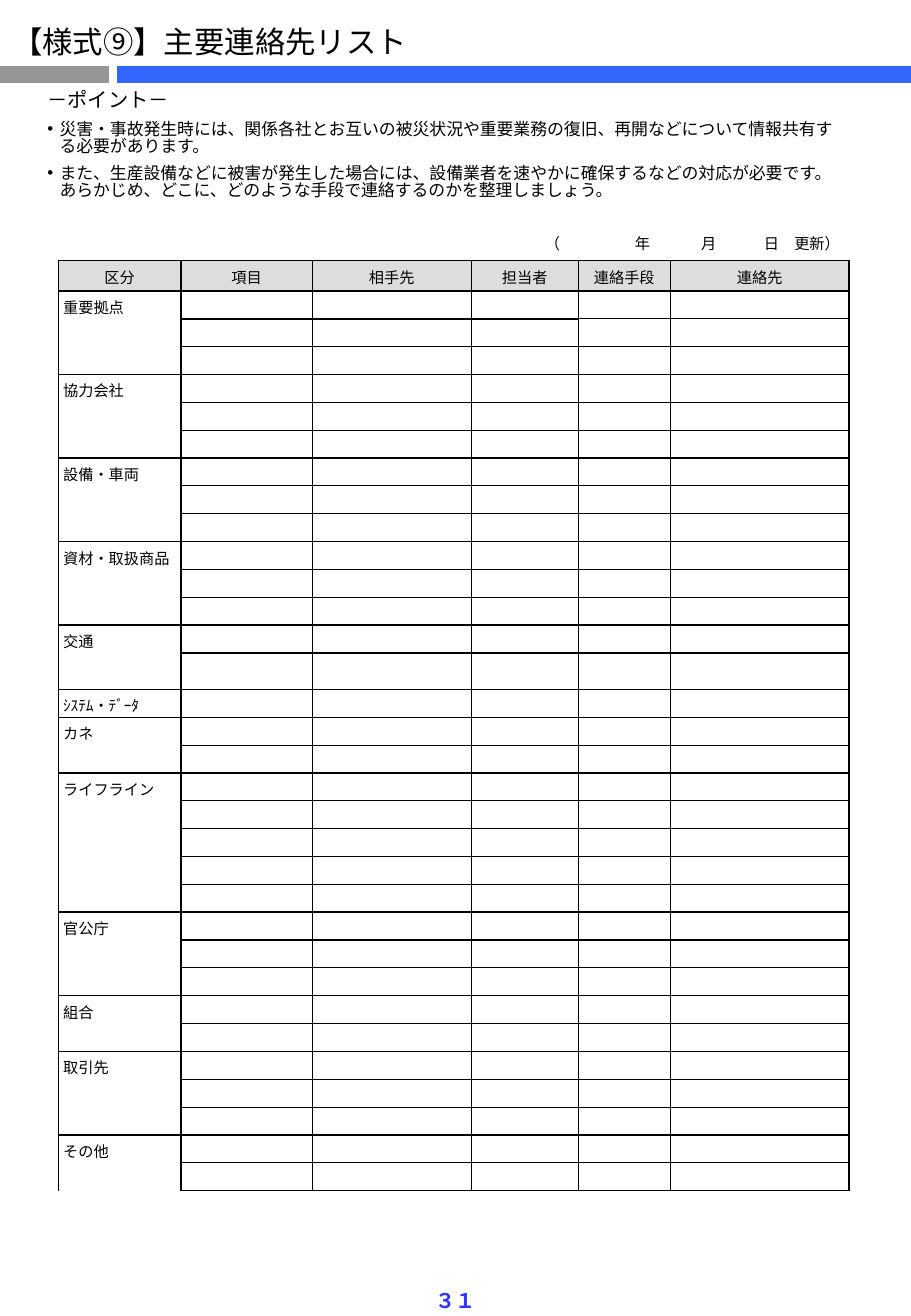
from dataclasses import dataclass
from itertools import accumulate

from lxml import etree
from pptx import Presentation
from pptx import util as u
from pptx.dml.color import RGBColor
from pptx.enum import shapes, text
from pptx.oxml.ns import qn

BLACK = RGBColor(0x00, 0x00, 0x00)
GREY = RGBColor(0x96, 0x96, 0x96)
BLUE = RGBColor(0x33, 0x66, 0xFF)
PAGE_BLUE = RGBColor(0x33, 0x33, 0xFF)
HEADER_GREY = RGBColor(0xDD, 0xDD, 0xDD)
FONT = "Noto Sans CJK JP"
NO_GRID = "{2D5ABB26-0587-4C30-8999-92F81FD0307C}"
THICK, THIN, HAIR = 1, 0.75, 0.5
LEFT, CENTER, RIGHT = text.PP_ALIGN.LEFT, text.PP_ALIGN.CENTER, text.PP_ALIGN.RIGHT


@dataclass
class Box:
    left: float
    top: float
    width: float
    height: float


@dataclass
class Rule:
    start: float
    end: float
    color: RGBColor


@dataclass
class Column:
    label: str
    width: float
    align: text.PP_ALIGN = CENTER


@dataclass
class Category:
    label: str
    rows: int
    inner: float = THIN


RULES = [Rule(0, 9, GREY), Rule(9.6, 75, BLUE)]
POINTS = [
    "災害・事故発生時には、関係各社とお互いの被災状況や重要業務の復旧、再開などについて情報共有する必要があります。",
    "また、生産設備などに被害が発生した場合には、設備業者を速やかに確保するなどの対応が必要です。"
    "あらかじめ、どこに、どのような手段で連絡するのかを整理しましょう。",
]
UPDATED = [Column("（", 3.9, RIGHT), Column("", 5.9), Column("年", 1.8), Column("", 3.9),
           Column("月", 1.3), Column("", 3.9), Column("日　更新）", 7.6, LEFT)]
CONTACTS = [Column("区分", 10.1), Column("項目", 10.8), Column("相手先", 13.1),
            Column("担当者", 8.8), Column("連絡手段", 7.6), Column("連絡先", 14.7)]
CATEGORIES = [
    Category("重要拠点", 3), Category("協力会社", 3), Category("設備・車両", 3),
    Category("資材・取扱商品", 3), Category("交通", 2), Category("ｼｽﾃﾑ・ﾃﾞｰﾀ", 1),
    Category("カネ", 2), Category("ライフライン", 5), Category("官公庁", 3),
    Category("組合", 2, HAIR), Category("取引先", 3), Category("その他", 2),
]
HEADER_HEIGHT, TALL_HEIGHT, LIST_HEIGHT = 2.5, 3, 76.6
TALL_ROW = 14


def grid(steps: float) -> int:
    """Length of a number of grid steps, ten to the inch."""
    return u.Inches(steps / 10)


def place(box: Box) -> tuple:
    return tuple(grid(n) for n in (box.left, box.top, box.width, box.height))


def apply(target, formats: dict) -> None:
    for name, value in formats.items():
        setattr(target, name, value)


def write(paragraph, words: str, size: float, color=BLACK, bold=False, **formats) -> None:
    run = paragraph.add_run()
    run.text = words
    apply(run.font, {"size": u.Pt(size), "name": FONT, "bold": bold})
    run.font.color.rgb = color
    etree.SubElement(run.font._element, qn("a:ea"), typeface=FONT)
    apply(paragraph, formats)


def draw_rule(slide, rule: Rule) -> None:
    line = slide.shapes.add_connector(shapes.MSO_CONNECTOR.STRAIGHT, grid(rule.start),
                                      grid(6.1), grid(rule.end), grid(6.1))
    line.line.color.rgb = rule.color
    line.line.width = u.Pt(10)
    etree.SubElement(line._element.spPr, qn("a:effectLst"))


def fill_title(title) -> None:
    apply(title, dict(zip(("left", "top", "width", "height"), place(Box(0, 1.4, 34.8, 4)))))
    apply(title.text_frame, {"word_wrap": False, "auto_size": text.MSO_AUTO_SIZE.NONE,
                             "vertical_anchor": text.MSO_ANCHOR.MIDDLE})
    write(title.text_frame.paragraphs[0], "【様式⑨】主要連絡先リスト", 18, alignment=LEFT)


def fill_points(body) -> None:
    apply(body, dict(zip(("left", "top", "width", "height"), place(Box(2.9, 7, 67.7, 11.4)))))
    frame = body.text_frame
    apply(frame, {"word_wrap": True, "auto_size": text.MSO_AUTO_SIZE.NONE})
    for index, words in enumerate(["－ポイント－", *POINTS]):
        paragraph = frame.add_paragraph() if index else frame.paragraphs[0]
        write(paragraph, words, 10 if index else 12, space_before=u.Pt(0),
              space_after=u.Pt(6), line_spacing=0.84)
        props = paragraph._p.get_or_add_pPr()
        props.set("marL", str(grid(1)))
        props.set("indent", str(-grid(1)))
        if index:
            etree.SubElement(props, qn("a:buChar"), char="•")
        else:
            etree.SubElement(props, qn("a:buNone"))


def add_grid_table(slide, box: Box, columns: list, heights: list):
    """Add an unstyled table with the given column widths and row heights."""
    table = slide.shapes.add_table(len(heights), len(columns), *place(box)).table
    apply(table, {"first_row": False, "horz_banding": False})
    table._tbl.tblPr.find(qn("a:tableStyleId")).text = NO_GRID
    for part, column in zip(table.columns, columns):
        part.width = grid(column.width)
    for part, height in zip(table.rows, heights):
        part.height = grid(height)
    return table


def fill_cell(cell, words: str, align=LEFT, side=0.4) -> None:
    apply(cell, {"margin_left": grid(side), "margin_right": grid(side),
                 "margin_top": grid(0.4 if words else 0.1), "margin_bottom": 0})
    paragraph = cell.text_frame.paragraphs[0]
    if words:
        write(paragraph, words, 9, alignment=align)
    else:
        etree.SubElement(paragraph._p, qn("a:endParaRPr"), sz="900")


def set_borders(cell, **widths: float) -> None:
    """Draw the sides L, R, T and B that are given a width in points."""
    props = cell._tc.get_or_add_tcPr()
    for side, width in widths.items():
        if width:
            line = etree.SubElement(props, qn(f"a:ln{side}"), w=str(u.Pt(width)))
            fill = etree.SubElement(line, qn("a:solidFill"))
            etree.SubElement(fill, qn("a:srgbClr"), val=str(BLACK))


def draw_updated(slide) -> None:
    table = add_grid_table(slide, Box(42.2, 18.7, 28.3, 2.3), UPDATED, [2.3])
    for cell, column in zip(table.rows[0].cells, UPDATED):
        fill_cell(cell, column.label, column.align, side=0)


def draw_contacts(slide) -> None:
    count = sum(category.rows for category in CATEGORIES)
    regular = (LIST_HEIGHT - HEADER_HEIGHT - TALL_HEIGHT) / (count - 1)
    heights = [HEADER_HEIGHT] + [regular] * count
    heights[TALL_ROW] = TALL_HEIGHT
    table = add_grid_table(slide, Box(4.8, 21.45, 65.1, LIST_HEIGHT), CONTACTS, heights)
    last = len(CONTACTS) - 1

    def sides(col: int) -> dict:
        return {"L": THIN if col else THICK, "R": THICK if col == last else THIN}

    for col, column in enumerate(CONTACTS):
        cell = table.cell(0, col)
        fill_cell(cell, column.label, column.align)
        set_borders(cell, **sides(col), T=THICK, B=THICK)
        cell.fill.solid()
        cell.fill.fore_color.rgb = HEADER_GREY

    starts = accumulate((category.rows for category in CATEGORIES), initial=1)
    for start, category in zip(starts, CATEGORIES):
        end = start + category.rows - 1
        for row in range(start, end + 1):
            for col in range(len(CONTACTS)):
                cell = table.cell(row, col)
                inner = category.inner if col else 0
                if 1 <= col <= 3 and start == 1:
                    above, below = (THICK if row == 2 else inner), (THICK if row == 1 else inner)
                else:
                    above = below = inner
                fill_cell(cell, category.label if (row, col) == (start, 0) else "")
                set_borders(cell, **sides(col), T=THICK if row == start else above,
                            B=THICK if row == end else below)
        if end > start:
            table.cell(start, 0).merge(table.cell(end, 0))


def draw_page_number(slide) -> None:
    frame = slide.shapes.add_textbox(*place(Box(34.8, 105.5, 5.4, 3.1))).text_frame
    frame.word_wrap = False
    write(frame.paragraphs[0], "３１", 12, PAGE_BLUE, True, alignment=CENTER)


def main() -> None:
    deck = Presentation()
    apply(deck, {"slide_width": grid(75), "slide_height": grid(108.3)})
    slide = deck.slides.add_slide(deck.slide_layouts[1])
    for rule in RULES:
        draw_rule(slide, rule)
    fill_title(slide.shapes.title)
    fill_points(slide.placeholders[1])
    draw_contacts(slide)
    draw_updated(slide)
    draw_page_number(slide)
    deck.save("out.pptx")


if __name__ == "__main__":
    main()
